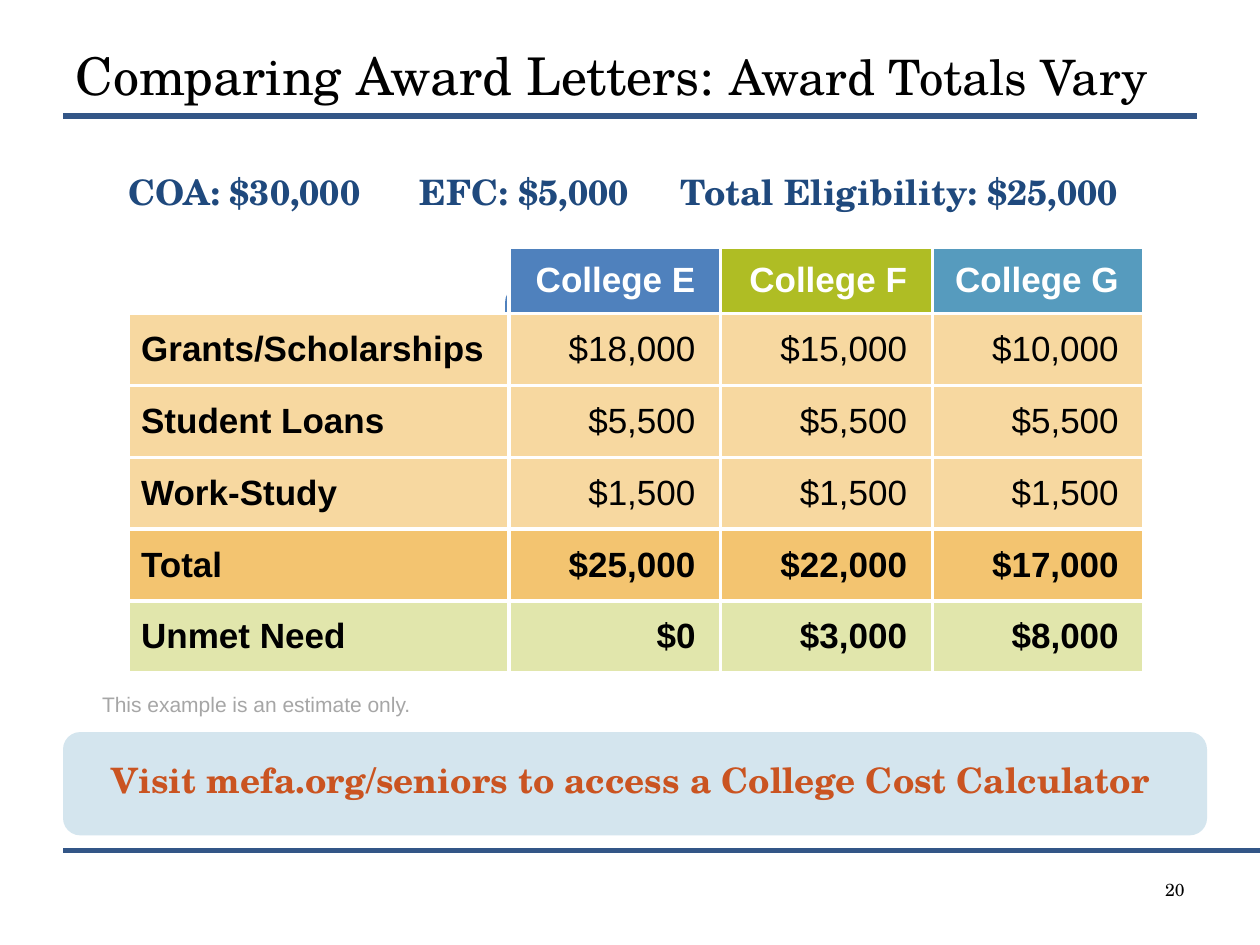
from lxml.etree import SubElement
from pptx import Presentation
from pptx.dml.color import RGBColor
from pptx.enum.shapes import MSO_CONNECTOR, MSO_SHAPE
from pptx.enum.text import MSO_ANCHOR, MSO_AUTO_SIZE, PP_ALIGN
from pptx.oxml.ns import qn
from pptx.util import Inches, Pt

SERIF, SANS = "TeX Gyre Schola", "Arial"
BLACK = RGBColor(0x00, 0x00, 0x00)
WHITE = RGBColor(0xFF, 0xFF, 0xFF)
GRAY = RGBColor(0xA6, 0xA6, 0xA6)
RULE_BLUE = RGBColor(0x33, 0x56, 0x87)
NAVY = RGBColor(0x1F, 0x49, 0x7D)
BLUE = RGBColor(0x4F, 0x81, 0xBD)
LIME = RGBColor(0xAF, 0xBD, 0x24)
TEAL = RGBColor(0x56, 0x9B, 0xBE)
RUST = RGBColor(0xCA, 0x54, 0x21)
SAND = RGBColor(0xF7, 0xD8, 0xA0)
ORANGE = RGBColor(0xF3, 0xC4, 0x70)
PALE_GREEN = RGBColor(0xE1, 0xE6, 0xAC)


def style(font, name, size, color, bold=False):
    font.name, font.size, font.bold = name, Pt(size), bold
    font.color.rgb = color


def add_text(page, text, left, top, width, height, align, inset, tabs=()):
    box = page.shapes.add_textbox(Inches(left), Inches(top), Inches(width), Inches(height))
    frame = box.text_frame
    frame.word_wrap = True
    frame.margin_left = Inches(inset)
    frame.text = text
    para = frame.paragraphs[0]
    para.alignment = align
    if tabs:
        tab_list = SubElement(para._p.get_or_add_pPr(), qn("a:tabLst"))
        for stop in tabs:
            SubElement(tab_list, qn("a:tab"), pos=str(Inches(stop)), algn="l")
    return para.runs


deck = Presentation()
deck.slide_width, deck.slide_height = Inches(10), Inches(7.5)
page = deck.slides.add_slide(deck.slide_layouts[5])

# Rules under the title and above the footer
for y, right, weight in [(0.92, 9.5, 3), (6.75, 10, 2.5)]:
    rule = page.shapes.add_connector(
        MSO_CONNECTOR.STRAIGHT, Inches(0.5), Inches(y), Inches(right), Inches(y))
    rule.line.color.rgb = RULE_BLUE
    rule.line.width = Pt(weight)
    SubElement(rule._element.spPr, qn("a:effectLst"))

# Title
title = page.shapes.title
title.left, title.top = Inches(0.5), Inches(0.2)
title.width, title.height = Inches(9.08), Inches(0.78)
title.text_frame.auto_size = MSO_AUTO_SIZE.NONE
title.text_frame.vertical_anchor = MSO_ANCHOR.MIDDLE
para = title.text_frame.paragraphs[0]
para.alignment = PP_ALIGN.LEFT
for text, size in [("Comparing Award Letters: ", 29.7), ("Award Totals Vary", 27.9)]:
    span = para.add_run()
    span.text = text
    style(span.font, SERIF, size, BLACK)

# Key figures, spaced by tab stops
for span in add_text(page, "COA: $30,000\tEFC: $5,000\tTotal Eligibility: $25,000",
                     1.02, 1.3, 8.05, 0.65, PP_ALIGN.LEFT, 0, tabs=(2.31, 4.38)):
    style(span.font, SERIF, 20, NAVY, True)

# Note under the table
for span in add_text(page, "This example is an estimate only.",
                     0.81, 5.44, 3.32, 0.3, PP_ALIGN.LEFT, 0):
    style(span.font, SANS, 12, GRAY)

# Rounded tab behind the first college heading
tab = page.shapes.add_shape(
    MSO_SHAPE.ROUNDED_RECTANGLE, Inches(4.01), Inches(2.28), Inches(1.64), Inches(0.42))
tab.adjustments[0] = 0.27
tab.shadow.inherit = False
tab.fill.solid()
tab.fill.fore_color.rgb = BLUE
tab.line.fill.background()

# Award table: texts, row fill, bold figures
rows = [
    (["", "College E", "College F", "College G"], None, True),
    (["Grants/Scholarships", "$18,000", "$15,000", "$10,000"], SAND, False),
    (["Student Loans", "$5,500", "$5,500", "$5,500"], SAND, False),
    (["Work-Study", "$1,500", "$1,500", "$1,500"], SAND, False),
    (["Total", "$25,000", "$22,000", "$17,000"], ORANGE, True),
    (["Unmet Need", "$0", "$3,000", "$8,000"], PALE_GREEN, True),
]
heading_fills = [None, BLUE, LIME, TEAL]
table = page.shapes.add_table(
    len(rows), 4, Inches(1.02), Inches(1.96), Inches(8.05), Inches(3.39)).table
table.horz_banding = False
for column, width in zip(table.columns, [3.02, 1.68, 1.68, 1.68]):
    column.width = Inches(width)
for row_index, (texts, row_fill, bold) in enumerate(rows):
    table.rows[row_index].height = Inches(0.57 if row_index else 0.53)
    for column_index, text in enumerate(texts):
        cell = table.cell(row_index, column_index)
        for side in ("a:lnL", "a:lnR", "a:lnT", "a:lnB"):
            border = SubElement(cell._tc.get_or_add_tcPr(), qn(side), w=str(Pt(2.25)))
            SubElement(SubElement(border, qn("a:solidFill")), qn("a:srgbClr"), val=str(WHITE))
        fill = row_fill or heading_fills[column_index]
        if fill is None:
            cell.fill.background()
            continue
        cell.fill.solid()
        cell.fill.fore_color.rgb = fill
        cell.vertical_anchor = MSO_ANCHOR.MIDDLE
        cell.text_frame.text = text
        para = cell.text_frame.paragraphs[0]
        if column_index:
            cell.margin_right = Inches(0.2)
            para.alignment = PP_ALIGN.RIGHT
        style(para.runs[0].font, SANS, 20, BLACK if row_index else WHITE,
              bold or column_index == 0)

# Call to action on a translucent panel
panel = page.shapes.add_shape(
    MSO_SHAPE.ROUNDED_RECTANGLE, Inches(0.5), Inches(5.81), Inches(9.08), Inches(0.82))
panel.shadow.inherit = False
panel.fill.solid()
panel.fill.fore_color.rgb = TEAL
color = panel._element.spPr.find(qn("a:solidFill")).find(qn("a:srgbClr"))
SubElement(color, qn("a:alpha"), val="25000")
panel.line.fill.background()
for span in add_text(page, "Visit mefa.org/seniors to access a College Cost Calculator",
                     0.52, 5.97, 8.98, 0.44, PP_ALIGN.CENTER, 0.1):
    style(span.font, SERIF, 20, RUST, True)

# Page number
for span in add_text(page, "20", 7.17, 6.93, 2.33, 0.4, PP_ALIGN.RIGHT, 0.1):
    style(span.font, SERIF, 10, BLACK)

deck.save("out.pptx")
